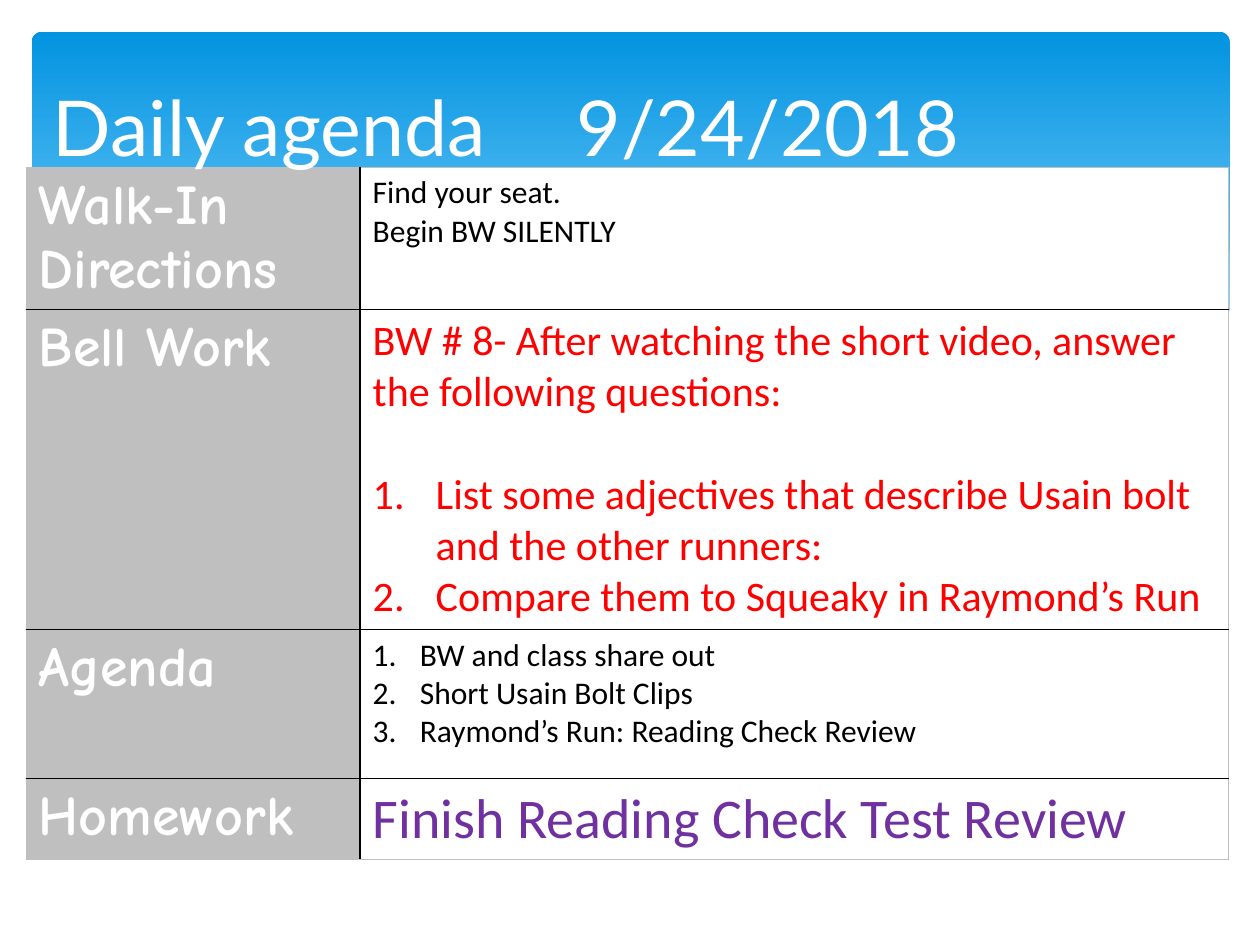
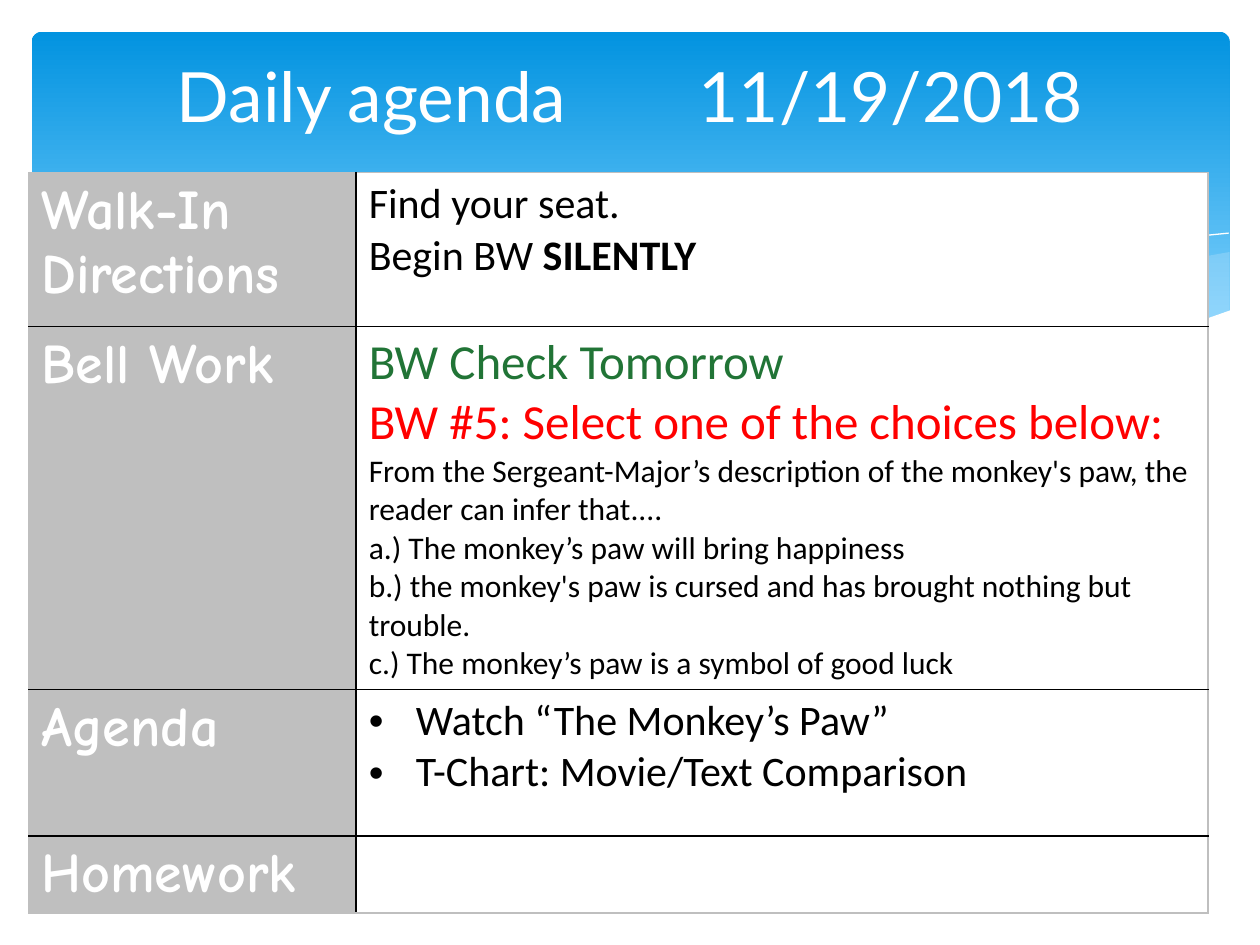
"""Build two daily agenda slides with a shared wave banner and an agenda table."""
import dataclasses

import lxml.etree
import pptx
import pptx.dml.color
import pptx.enum.shapes
import pptx.enum.text
import pptx.oxml.ns
import pptx.util

Cm = pptx.util.Cm
Pt = pptx.util.Pt
qn = pptx.oxml.ns.qn
Color = pptx.dml.color.RGBColor.from_string
Align = pptx.enum.text.PP_ALIGN
Anchor = pptx.enum.text.MSO_ANCHOR


@dataclasses.dataclass(frozen=True)
class Theme:
    banner_top: str = "0293E0"
    banner_bottom: str = "83D3FE"
    wave: str = "C6E7FC"
    white: str = "FFFFFF"
    black: str = "000000"
    gray: str = "BFBFBF"
    red: str = "FF0000"
    green: str = "217436"
    purple: str = "7030A0"
    title_font: str = "Lato"
    label_font: str = "Comic Neue"
    text_font: str = "Calibri"
    small: int = 18
    medium: int = 24
    large: int = 28
    label: int = 32


theme = Theme()


def style_font(font, name, size, color, bold=False):
    font.name = name
    font.size = Pt(size)
    font.color.rgb = Color(color)
    font.bold = bold


def add_border(cell, side, color):
    properties = cell._tc.get_or_add_tcPr()
    line = lxml.etree.SubElement(properties, qn(f"a:ln{side}"), w=str(Pt(1)))
    fill = lxml.etree.SubElement(line, qn("a:solidFill"))
    lxml.etree.SubElement(fill, qn("a:srgbClr"), val=color)


row_labels = ["Walk-In Directions", "Bell Work", "Agenda", "Homework"]

agendas = [
    {
        "title": "Daily agenda\t 9/24/2018",
        "title_box": (0.81, 1.27, 23.7, 2.54),
        "title_style": (44, Align.LEFT, Anchor.MIDDLE),
        "table_corner": (0.53, 3.38),
        "columns": (6.73, 17.5),
        "rows": (2.86, 6.45, 3.0, 1.63),
        "details": [
            [(["Find your seat."], theme.small, theme.black, None),
             (["Begin BW SILENTLY"], theme.small, theme.black, None)],
            [(["BW # 8- After watching the short video, answer the following questions:"],
              theme.medium, theme.red, None),
             (["List some adjectives that describe Usain bolt and the other runners:"],
              theme.medium, theme.red, "number"),
             (["Compare them to Squeaky in Raymond’s Run"],
              theme.medium, theme.red, "number")],
            [([step], theme.small, theme.black, "number")
             for step in ("BW and class share out", "Short Usain Bolt Clips",
                          "Raymond’s Run: Reading Check Review")],
            [(["Finish Reading Check Test Review"], theme.label, theme.purple, None)],
        ],
    },
    {
        "title": "Daily agenda\t 11/19/2018",
        "title_box": (1.27, 0.94, 22.86, 3.48),
        "title_style": (39.6, Align.CENTER, Anchor.TOP),
        "table_corner": (0.58, 3.48),
        "columns": (6.6, 17.17),
        "rows": (3.1, 7.32, 2.95, 1.55),
        "details": [
            [(["Find your seat."], theme.medium, theme.black, None),
             (["Begin BW ", "SILENTLY"], theme.medium, theme.black, None)],
            [(["BW Check Tomorrow"], theme.large, theme.green, None),
             (["BW #5: Select one of the choices below:"], theme.large, theme.red, None)]
            + [([text], theme.small, theme.black, None) for text in (
                "From the Sergeant-Major’s description of the monkey's paw, "
                "the reader can infer that....",
                "a.) The monkey’s paw will bring happiness",
                "b.) the monkey's paw is cursed and has brought nothing but trouble.",
                "c.) The monkey’s paw is a symbol of good luck")],
            [([activity], theme.medium, theme.black, "bullet")
             for activity in ("Watch “The Monkey’s Paw”", "T-Chart: Movie/Text Comparison")],
            [],
        ],
    },
]

right_wave = [
    (24.79, 5.08), (23.39, 5.33), (21.87, 5.66), (20.45, 6.02), (18.52, 6.43), (16.79, 6.73),
    (17.91, 6.88), (19.23, 7.01), (20.68, 7.06), (22.15, 6.96), (23.39, 6.73), (24.79, 6.27)]
middle_wave = [
    (22.68, 6.93), (21.26, 6.73), (19.69, 6.45), (17.93, 6.1), (15.98, 5.64), (14.45, 5.28),
    (13.06, 5.03), (11.81, 4.85), (10.67, 4.75), (9.17, 4.7), (7.95, 4.78), (7.26, 4.85),
    (8.69, 5.05), (10.26, 5.36), (12.47, 5.89), (14.38, 6.3), (16.1, 6.63), (17.65, 6.86),
    (19, 7.01), (20.5, 7.06), (21.77, 7.04)]
long_curve = [
    (7.85, 4.95), (8.74, 4.83), (9.83, 4.75), (11, 4.75), (12.42, 4.83), (14.12, 5),
    (16.15, 5.28), (17.65, 5.56), (19.3, 5.92), (21.11, 6.38), (23.04, 6.91)]
short_curve = [
    (15.57, 6.53), (17.07, 6.12), (19, 5.66), (20.47, 5.33), (22, 5.05), (23.47, 4.83),
    (24.77, 4.7)]
white_wave = [
    (24.82, 6.25), (23.88, 6.58), (22.83, 6.83), (21.59, 6.99), (20.14, 7.01), (18.44, 6.91),
    (16.46, 6.65), (14.1, 6.22), (11.35, 5.59), (9.27, 5.13), (7.42, 4.83), (5.84, 4.7),
    (4.5, 4.67), (3.35, 4.72), (2.16, 4.9), (1.17, 5.16), (0.58, 5.41), (0.58, 8.36),
    (24.82, 8.36)]
waves = [
    (right_wave, theme.wave, 29), (middle_wave, theme.wave, 40), (long_curve, None, 100),
    (short_curve, None, 100), (white_wave, theme.white, 100)]

presentation = pptx.Presentation()
presentation.slide_width = Cm(25.4)
presentation.slide_height = Cm(19.05)
layout = presentation.slide_layouts[5]
slides = [presentation.slides.add_slide(layout) for agenda in agendas]

shapes = slides[0].shapes
banner = shapes.add_shape(
    pptx.enum.shapes.MSO_SHAPE.ROUNDED_RECTANGLE, Cm(0.64), Cm(0.64), Cm(24.15), Cm(6.86))
banner.adjustments[0] = 0.03
banner.line.fill.background()
banner.fill.gradient()
banner.fill.gradient_angle = 270
for stop, position, color in zip(
        banner.fill.gradient_stops, (0, 0.9), (theme.banner_top, theme.banner_bottom)):
    stop.position = position
    stop.color.rgb = Color(color)

backdrop = [banner]
for points, color, opacity in waves:
    corners = [(Cm(x), Cm(y)) for x, y in points]
    builder = shapes.build_freeform(*corners[0])
    builder.add_line_segments(corners[1:], close=color is not None)
    wave = builder.convert_to_shape()
    if color:
        wave.fill.solid()
        wave.fill.fore_color.rgb = Color(color)
        wave.line.fill.background()
        tint = wave.element.find(f".//{qn('a:srgbClr')}")
        lxml.etree.SubElement(tint, qn("a:alpha"), val=str(opacity * 1000))
    else:
        wave.fill.background()
        wave.line.color.rgb = Color(theme.white)
        wave.line.width = Pt(0)
    backdrop.append(wave)

for index, shape in enumerate(backdrop):
    shape.shadow.inherit = False
    shape.element.nvSpPr.cNvPr.set("id", str(100 + index))
    layout.shapes.element.insert(2 + index, shape.element)

for slide, agenda in zip(slides, agendas):
    left, top = agenda["table_corner"]
    table = slide.shapes.add_table(
        len(row_labels), 2, Cm(left), Cm(top),
        Cm(sum(agenda["columns"])), Cm(sum(agenda["rows"]))).table
    table.first_row = False
    table.horz_banding = False
    for column, width in zip(table.columns, agenda["columns"]):
        column.width = Cm(width)
    for row, height in zip(table.rows, agenda["rows"]):
        row.height = Cm(height)

    last_row = len(row_labels) - 1
    for index, (label, details) in enumerate(zip(row_labels, agenda["details"])):
        label_cell, detail_cell = table.cell(index, 0), table.cell(index, 1)
        for cell, inner_side, fill in (
                (label_cell, "R", theme.gray), (detail_cell, "L", theme.white)):
            inner_sides = {inner_side}
            if index > 0:
                inner_sides.add("T")
            if index < last_row:
                inner_sides.add("B")
            for side in "LRTB":
                add_border(cell, side, theme.black if side in inner_sides else theme.gray)
            cell.fill.solid()
            cell.fill.fore_color.rgb = Color(fill)

        label_cell.text = label
        style_font(label_cell.text_frame.paragraphs[0].font,
                   theme.label_font, theme.label, theme.white, True)

        previous_marker = None
        for line_number, (parts, size, color, marker) in enumerate(details):
            frame = detail_cell.text_frame
            paragraph = frame.add_paragraph() if line_number else frame.paragraphs[0]
            if marker:
                properties = paragraph._p.get_or_add_pPr()
                indent = Cm(1.27 if size == theme.medium and marker == "number" else 0.95)
                properties.set("marL", str(indent))
                properties.set("indent", str(-indent))
                if marker == "number":
                    lxml.etree.SubElement(properties, qn("a:buAutoNum"), type="arabicPeriod")
                else:
                    lxml.etree.SubElement(properties, qn("a:buFont"), typeface="Arial")
                    lxml.etree.SubElement(properties, qn("a:buChar"), char="•")
                if line_number and not previous_marker:
                    paragraph.space_before = Pt(29.3)
            style_font(paragraph.font, theme.text_font, size, color)
            for part_number, part in enumerate(parts):
                run = paragraph.add_run()
                run.text = part
                if part_number:
                    run.font.bold = True
            previous_marker = marker

    title = slide.shapes.title
    title.left, title.top, title.width, title.height = map(Cm, agenda["title_box"])
    size, alignment, anchor = agenda["title_style"]
    title.text_frame.text = agenda["title"]
    title.text_frame.auto_size = pptx.enum.text.MSO_AUTO_SIZE.NONE
    title.text_frame.vertical_anchor = anchor
    paragraph = title.text_frame.paragraphs[0]
    paragraph.alignment = alignment
    tabs = lxml.etree.SubElement(paragraph._p.get_or_add_pPr(), qn("a:tabLst"))
    lxml.etree.SubElement(tabs, qn("a:tab"), pos=str(Cm(10.16)), algn="l")
    style_font(paragraph.font, theme.title_font, size, theme.white)
    slide.shapes.element.append(title.element)

presentation.save("out.pptx")
